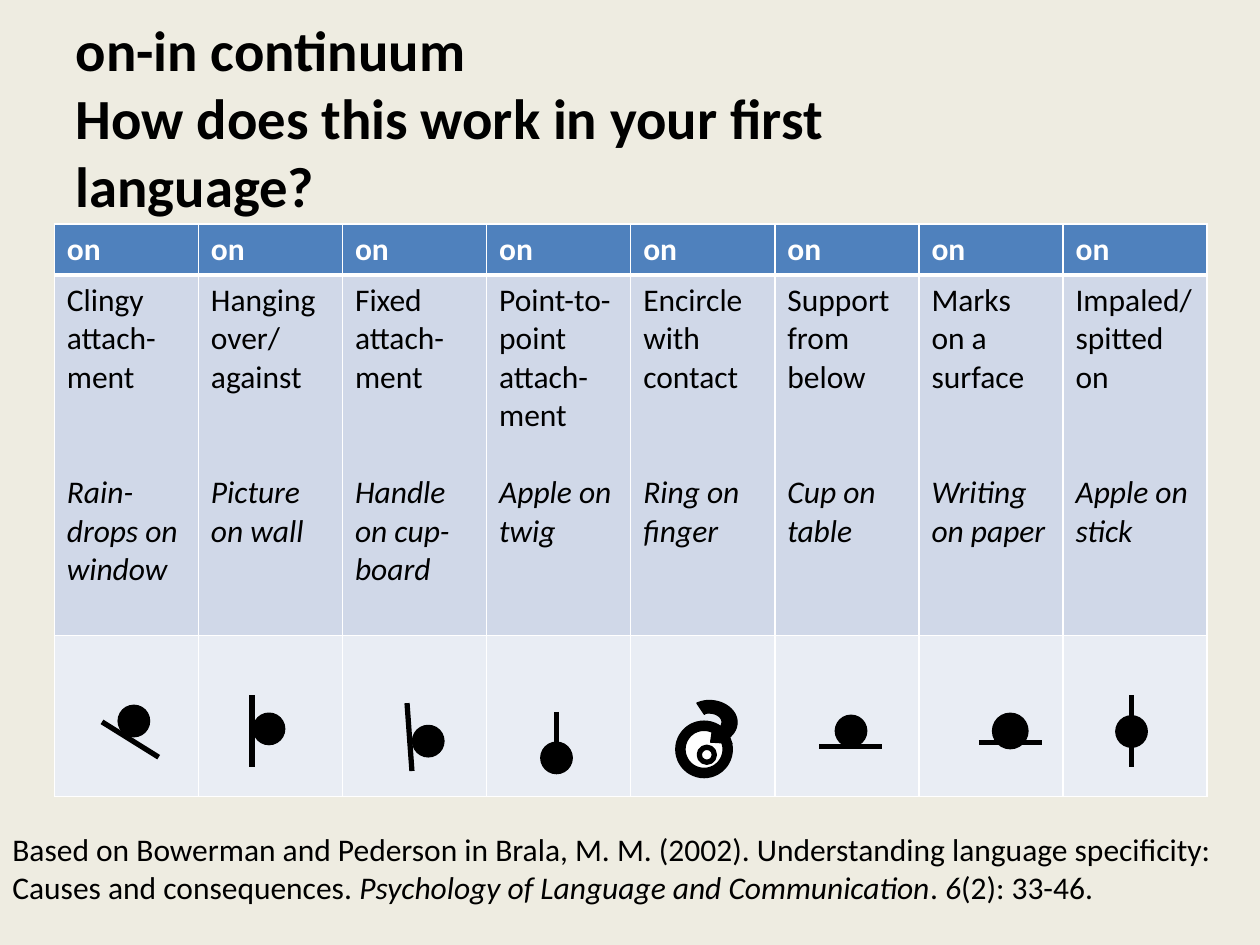
"""Build the on-in continuum slide."""
from pptx import Presentation
from pptx.dml.color import RGBColor
from pptx.enum import shapes, text
from pptx.oxml import parse_xml
from pptx.oxml.ns import nsdecls
from pptx.util import Pt

TITLE = "on-in continuum\vHow does this work in your first language?"
COLUMNS = [
    (["Clingy attach-ment"], "Rain-drops on window", 44),
    (["Hanging over/", "against"], "Picture on wall", 44),
    (["Fixed attach-ment"], "Handle on cup-board", 44),
    (["Point-to-point attach-ment"], "Apple on twig", 22),
    (["Encircle with contact"], "Ring on finger", 44),
    (["Support from below"], "Cup on table", 44),
    (["Marks on a surface"], "Writing on paper", 44),
    (["Impaled/", "spitted on"], "Apple on stick", 44),
]
CITATION = [
    ("Based on Bowerman and Pederson in Brala, M. M. (2002). Understanding "
     "language specificity: Causes and consequences. ", False),
    ("Psychology of Language and Communication", True),
    (". ", False), ("6", True), ("(2): 33-46.", False),
]
ROWS = [(29, "4F81BD"), (206, "D0D8E8"), (92, "E9EDF4")]
LEFT, TOP, COL_W = 31, 128, 82.35
STICKS = [
    (58.3, 412.5, 90.7, 432.7), (144, 397.4, 144, 438.5),
    (232.6, 401.8, 235.4, 440.6), (318.2, 406.8, 318.2, 424.1),
    (468, 426.6, 504, 426.6), (559.4, 424.1, 595.4, 424.1),
    (646.6, 397.4, 646.6, 438.5),
]
BALL = 18
BALLS = [
    (67.5, 403, 0.75), (144.7, 407.5, 0.75), (235.7, 414.5, 0.75),
    (309, 424.1, 0.75), (477.3, 408.7, 0.75), (568.3, 408.7, 3),
    (637.6, 409, 0.75),
]
RINGS = [(388.8, 414.7, 27, 6), (399.6, 427, 8.6, 3)]
HOOK_START = (409.7, 416.9)
HOOK = [
    [(411.1, 416.2), (412.6, 414.7), (412.6, 412.6)],
    [(412.6, 409.7), (409, 407.5), (405.4, 407.5)],
    [(403.9, 407.5), (403.2, 407.5), (402.5, 408.2)],
    [(398.2, 401.8)],
    [(400.3, 401), (402.5, 400.3), (405.4, 400.3)],
    [(414, 400.3), (421.2, 406.1), (421.2, 412.6)],
    [(421.2, 416.9), (419, 419.8), (415.4, 422.6)],
    [(418.3, 424.8)], [(406.1, 424.1)], [(407.5, 414.7)],
]


def rgb(value):
    return RGBColor.from_string(value)


def write(p, content, size=18, color="000000", bold=False, italic=False):
    for i, part in enumerate(content.split("\v")):
        if i:
            p.add_line_break()
        r = p.add_run()
        r.text = part
        f = r.font
        f.name, f.size, f.bold, f.italic = "Calibri", Pt(size), bold, italic
        f.color.rgb = rgb(color)


def paint(sp, fill, width):
    sp.shadow.inherit = False
    sp.fill.solid()
    sp.fill.fore_color.rgb = rgb(fill)
    sp.line.color.rgb = rgb("000000")
    sp.line.width = Pt(width)


def circle(s, x, y, size, fill, width):
    sp = s.shapes.add_shape(shapes.MSO_SHAPE.OVAL, Pt(x), Pt(y), Pt(size), Pt(size))
    paint(sp, fill, width)


def stick(s, *ends):
    c = s.shapes.add_connector(shapes.MSO_CONNECTOR.STRAIGHT, *map(Pt, ends))
    c.line.color.rgb = rgb("000000")
    c.line.width = Pt(3)
    c._element.spPr.append(parse_xml(f"<a:effectLst {nsdecls('a')}/>"))


def curve(p0, p1, p2, p3, steps=12):
    for k in range(1, steps + 1):
        t = k / steps
        weights = ((1 - t) ** 3, 3 * t * (1 - t) ** 2, 3 * t * t * (1 - t), t ** 3)
        yield tuple(sum(w * p[i] for w, p in zip(weights, (p0, p1, p2, p3)))
                    for i in (0, 1))


def hook(s):
    points = [HOOK_START]
    for segment in HOOK:
        points += curve(points[-1], *segment) if len(segment) == 3 else segment
    emu = [(Pt(x), Pt(y)) for x, y in points]
    builder = s.shapes.build_freeform(*emu[0])
    builder.add_line_segments(emu[1:], close=True)
    paint(builder.convert_to_shape(), "000000", 0.75)


def style_cell(cell, fill, top, bottom):
    tc_pr = cell._tc.get_or_add_tcPr()
    for side, width in (("L", 1), ("R", 1), ("T", top), ("B", bottom)):
        tc_pr.append(parse_xml(
            f'<a:ln{side} {nsdecls("a")} w="{Pt(width)}"><a:solidFill>'
            f'<a:srgbClr val="FFFFFF"/></a:solidFill></a:ln{side}>'))
    cell.fill.solid()
    cell.fill.fore_color.rgb = rgb(fill)


def add_grid(s):
    n = len(COLUMNS)
    height = sum(h for h, _ in ROWS)
    table = s.shapes.add_table(len(ROWS), n, Pt(LEFT), Pt(TOP),
                               Pt(COL_W * n), Pt(height)).table
    for i, (row_h, fill) in enumerate(ROWS):
        table.rows[i].height = Pt(row_h)
        for j in range(n):
            style_cell(table.cell(i, j), fill, 3 if i == 1 else 1, 3 if i == 0 else 1)
    for j, (meaning, example, gap) in enumerate(COLUMNS):
        table.columns[j].width = Pt(COL_W)
        write(table.cell(0, j).text_frame.paragraphs[0], "on", color="FFFFFF", bold=True)
        tf = table.cell(1, j).text_frame
        for k, line in enumerate(meaning):
            write(tf.add_paragraph() if k else tf.paragraphs[0], line)
        p = tf.add_paragraph()
        p.space_before = Pt(gap)
        write(p, example, italic=True)


def main():
    prs = Presentation()
    prs.slide_width, prs.slide_height = Pt(720), Pt(540)
    s = prs.slides.add_slide(prs.slide_layouts[5])
    s.background.fill.solid()
    s.background.fill.fore_color.rgb = rgb("EEECE1")

    title = s.shapes.title
    title.left, title.top, title.width, title.height = map(Pt, (36, 21.6, 488, 90.7))
    tf = title.text_frame
    tf.word_wrap = True
    tf.auto_size = text.MSO_AUTO_SIZE.NONE
    tf.vertical_anchor = text.MSO_ANCHOR.MIDDLE
    tf.paragraphs[0].alignment = text.PP_ALIGN.LEFT
    write(tf.paragraphs[0], TITLE, size=32.4, bold=True)

    add_grid(s)
    for ends in STICKS:
        stick(s, *ends)
    for x, y, width in BALLS:
        circle(s, x, y, BALL, "000000", width)
    for x, y, size, width in RINGS:
        circle(s, x, y, size, "FFFFFF", width)
    hook(s)

    tf = s.shapes.add_textbox(Pt(0), Pt(471), Pt(720), Pt(51)).text_frame
    tf.word_wrap = True
    for part, italic in CITATION:
        write(tf.paragraphs[0], part, italic=italic)
    prs.save("out.pptx")


if __name__ == "__main__":
    main()
